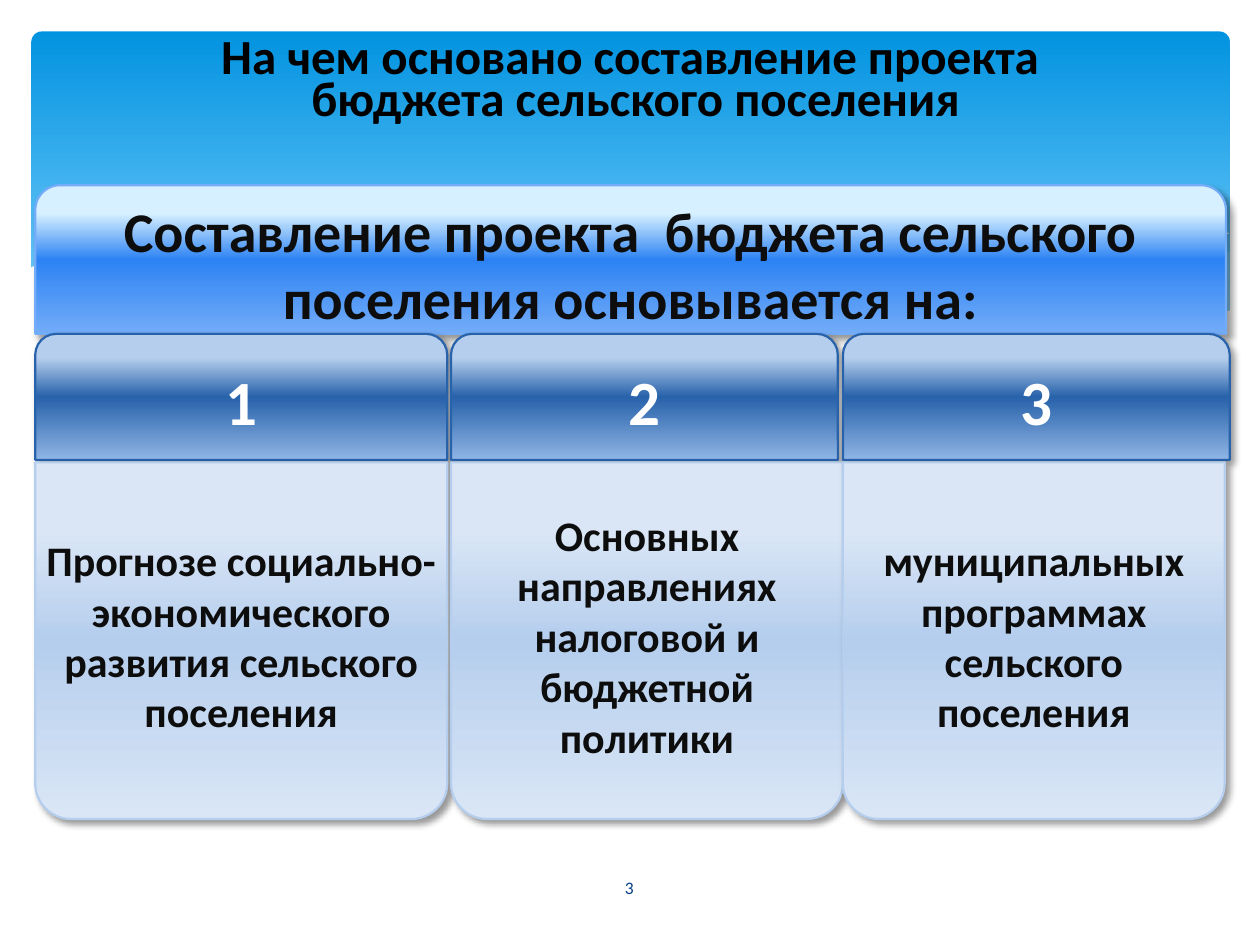
from dataclasses import dataclass

from lxml.etree import SubElement
from pptx import Presentation
from pptx.dml.color import RGBColor
from pptx.enum.shapes import MSO_SHAPE
from pptx.enum.text import MSO_ANCHOR, PP_ALIGN
from pptx.oxml.ns import qn
from pptx.util import Inches, Pt


@dataclass(frozen=True)
class Theme:
    font: str = "Calibri"
    black: str = "000000"
    dark: str = "0D0D0D"
    white: str = "FFFFFF"
    navy: str = "073E87"
    mist: str = "C6E7FC"
    sky: tuple = ((0, "0293E0"), (90, "83D3FE"))
    banner: tuple = ((19, "D6F0FF"), (50, "2D83F4"), (100, "73ACF8"))
    header: tuple = ((19, "B5CEED"), (50, "2862AA"), (100, "8FB5E5"))
    body: tuple = ((19, "DAE6F6"), (50, "B5CEED"), (100, "DAE6F6"))
    banner_line: str = "73ACF8"
    header_line: str = "2862AA"
    body_line: str = "B5CEED"
    title_size: int = 28
    banner_size: int = 32
    number_size: int = 36
    body_size: int = 24
    footer_size: int = 10


class SlideBuilder:
    columns, rows = 100, 75

    def __init__(self, presentation, theme):
        self.theme = theme
        self.column = presentation.slide_width / self.columns
        self.row = presentation.slide_height / self.rows
        self.slide = presentation.slides.add_slide(presentation.slide_layouts[6])

    def place(self, left, top, width, height):
        return (round(left * self.column), round(top * self.row),
                round(width * self.column), round(height * self.row))

    def gradient(self, shape, stops):
        shape.fill.gradient()
        shape.fill.gradient_angle = 270
        stop_list = shape._element.spPr.find(qn("a:gradFill")).find(qn("a:gsLst"))
        for stop in list(stop_list):
            stop_list.remove(stop)
        for position, color in stops:
            stop = SubElement(stop_list, qn("a:gs"), pos=str(position * 1000))
            SubElement(stop, qn("a:srgbClr"), val=color)

    def cast_shadow(self, effects):
        shadow = SubElement(effects, qn("a:outerShdw"), blurRad=str(Pt(4)), dist=str(Pt(3)),
                            dir="2700000", algn="tl", rotWithShape="0")
        color = SubElement(shadow, qn("a:srgbClr"), val=self.theme.black)
        SubElement(color, qn("a:alpha"), val="40000")

    def fill_text(self, frame, lines, size, color, bold=True, anchor=MSO_ANCHOR.MIDDLE,
                  spacing=None, shadow=False):
        frame.word_wrap = True
        frame.vertical_anchor = anchor
        for index, line in enumerate(lines):
            paragraph = frame.add_paragraph() if index else frame.paragraphs[0]
            paragraph.alignment = PP_ALIGN.CENTER
            paragraph.line_spacing = spacing
            font = paragraph.font
            font.name, font.size, font.bold = self.theme.font, Pt(size), bold
            font.color.rgb = RGBColor.from_string(color)
            run = paragraph.add_run()
            run.text = line
            if shadow:
                properties = run._r.get_or_add_rPr()
                self.cast_shadow(SubElement(properties, qn("a:effectLst")))

    def text(self, box, lines, size, color, **options):
        shape = self.slide.shapes.add_textbox(*self.place(*box))
        self.fill_text(shape.text_frame, lines, size, color, **options)

    def block(self, kind, box, stops, line=None, corners=()):
        shape = self.slide.shapes.add_shape(kind, *self.place(*box))
        shape.shadow.inherit = False
        for index, corner in enumerate(corners):
            shape.adjustments[index] = corner
        self.gradient(shape, stops)
        if line:
            shape.line.color.rgb = RGBColor.from_string(line)
            shape.line.width = Pt(1.25)
            self.cast_shadow(shape._element.spPr.find(qn("a:effectLst")))
        else:
            shape.line.fill.background()
        return shape

    def panel(self, box, stops, line, text, size, color, corners=(), inset=None):
        shape = self.block(MSO_SHAPE.ROUND_2_SAME_RECTANGLE, box, stops, line, corners)
        frame = shape.text_frame
        if inset is not None:
            frame.margin_left = frame.margin_right = inset
            frame.margin_top = frame.margin_bottom = inset
        self.fill_text(frame, [text], size, color)

    def wave(self, points, fill=None, opacity=100):
        start, *rest = [(x * self.column, y * self.row) for x, y in points]
        builder = self.slide.shapes.build_freeform(*start)
        builder.add_line_segments(rest, close=fill is not None)
        shape = builder.convert_to_shape()
        shape.shadow.inherit = False
        if fill:
            shape.fill.solid()
            shape.fill.fore_color.rgb = RGBColor.from_string(fill)
            color = shape._element.spPr.find(qn("a:solidFill"))[0]
            SubElement(color, qn("a:alpha"), val=str(opacity * 1000))
            shape.line.fill.background()
        else:
            shape.fill.background()
            shape.line.color.rgb = RGBColor.from_string(self.theme.white)
            shape.line.width = Pt(0)


RIGHT_WAVE = [(97.6, 20), (94.8, 20.4), (90.6, 21.3), (86.1, 22.3), (77.9, 24.2), (66.1, 26.5),
              (71.9, 27.2), (78.1, 27.7), (84.4, 27.7), (89.7, 27), (94.2, 25.9), (97.6, 24.7)]
LONG_WAVE = [(89.3, 27.3), (83.7, 26.5), (74.1, 24.7), (62.9, 22.2), (55.5, 20.5), (46.5, 19.1),
             (38, 18.5), (32.8, 18.7), (28.6, 19.1), (36.2, 20.3), (44.9, 22.2), (56.6, 24.8),
             (66.5, 26.6), (74.8, 27.6), (81.8, 27.8), (86.7, 27.6)]
UPPER_LINE = [(30.9, 19.5), (35.3, 18.9), (41.6, 18.7), (48.9, 19), (55.6, 19.7), (63.6, 20.8),
              (72.7, 22.6), (83.1, 25.1), (90.7, 27.2)]
RISING_LINE = [(61.3, 25.7), (69.5, 23.5), (77.6, 21.6), (86.6, 19.9), (92.4, 19), (97.5, 18.5)]
WHITE_WAVE = [(97.7, 24.6), (94, 25.9), (89.9, 26.9), (85, 27.5), (79.3, 27.6), (72.6, 27.2),
              (64.8, 26.2), (55.5, 24.5), (44.7, 22), (36.5, 20.2), (29.2, 19), (23, 18.5),
              (16.1, 18.4), (10.6, 18.9), (6.7, 19.7), (4, 20.5), (2.3, 21.3), (2.3, 32.9),
              (97.7, 32.9)]

CARDS = [
    (2.8, 32.7, 32.7, "Прогнозе социально-экономического развития сельского поселения"),
    (35.8, 30.7, 31.1, "Основных направлениях налоговой и бюджетной политики"),
    (66.9, 30.7, 30.3, "муниципальных программах сельского поселения"),
]


def main():
    theme = Theme()
    presentation = Presentation()
    presentation.slide_width, presentation.slide_height = Inches(10), Inches(7.5)
    builder = SlideBuilder(presentation, theme)

    builder.block(MSO_SHAPE.ROUNDED_RECTANGLE, (2.5, 2.5, 95.1, 27), theme.sky, corners=(0.03,))
    builder.wave(RIGHT_WAVE, theme.mist, 29)
    builder.wave(LONG_WAVE, theme.mist, 40)
    builder.wave(UPPER_LINE)
    builder.wave(RISING_LINE)
    builder.wave(WHITE_WAVE, theme.white)

    builder.text((0, 2.9, 100, 11.8),
                 ["На чем основано составление проекта", " бюджета сельского поселения"],
                 theme.title_size, theme.black, anchor=MSO_ANCHOR.TOP, spacing=Pt(24), shadow=True)
    builder.text((43.6, 68.4, 12.7, 4), ["3"], theme.footer_size, theme.navy, bold=False)

    builder.panel((2.8, 14.7, 94.5, 11.8), theme.banner, theme.banner_line,
                  "Составление проекта  бюджета сельского поселения основывается на:",
                  theme.banner_size, theme.dark)
    for number, (left, header_width, body_width, text) in enumerate(CARDS, 1):
        builder.panel((left, 26.5, header_width, 10), theme.header, theme.header_line,
                      str(number), theme.number_size, theme.white)
        builder.panel((left, 36.7, body_width, 28.3), theme.body, theme.body_line,
                      text, theme.body_size, theme.dark, corners=(0, 0.1), inset=0)

    presentation.save("out.pptx")


if __name__ == "__main__":
    main()
